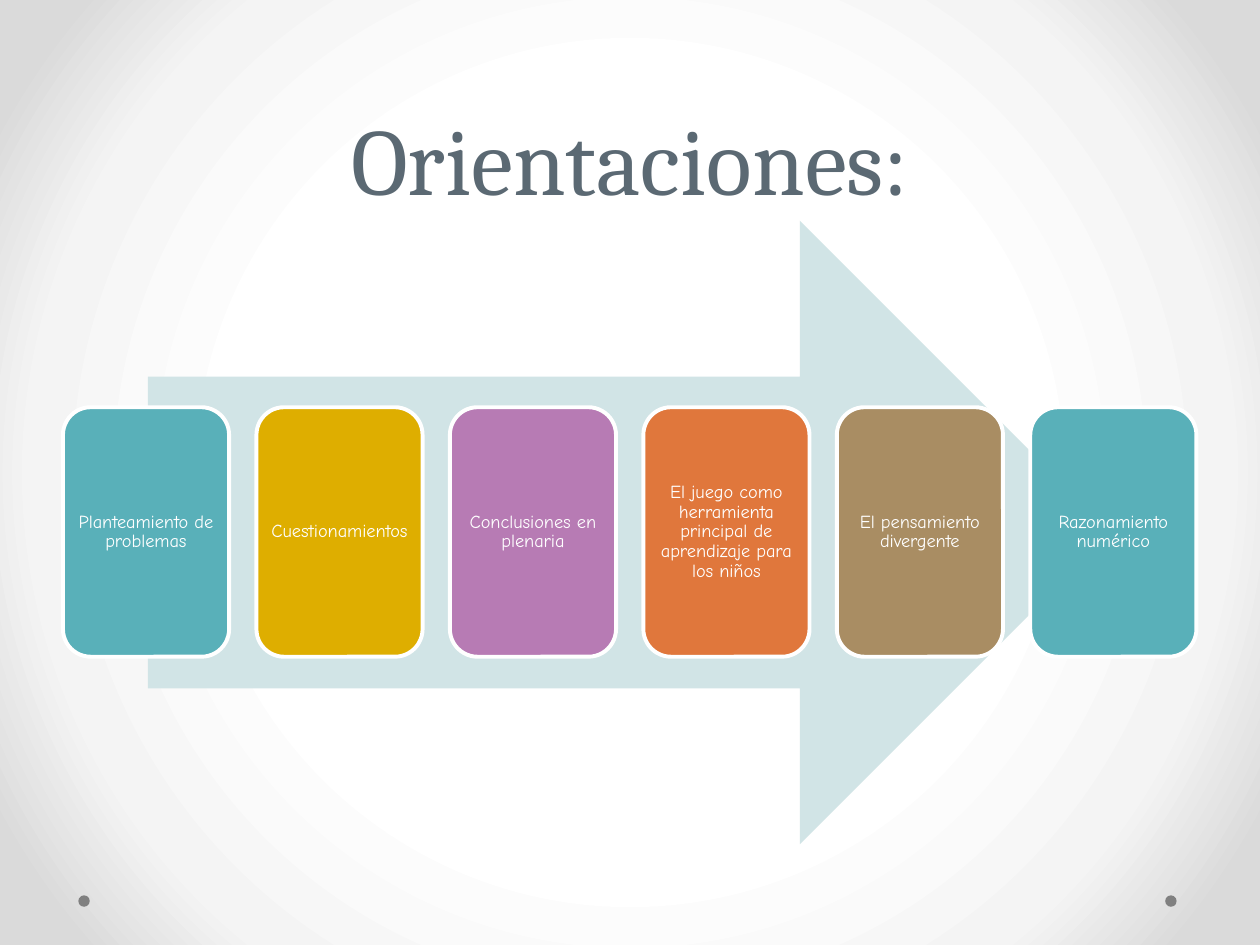
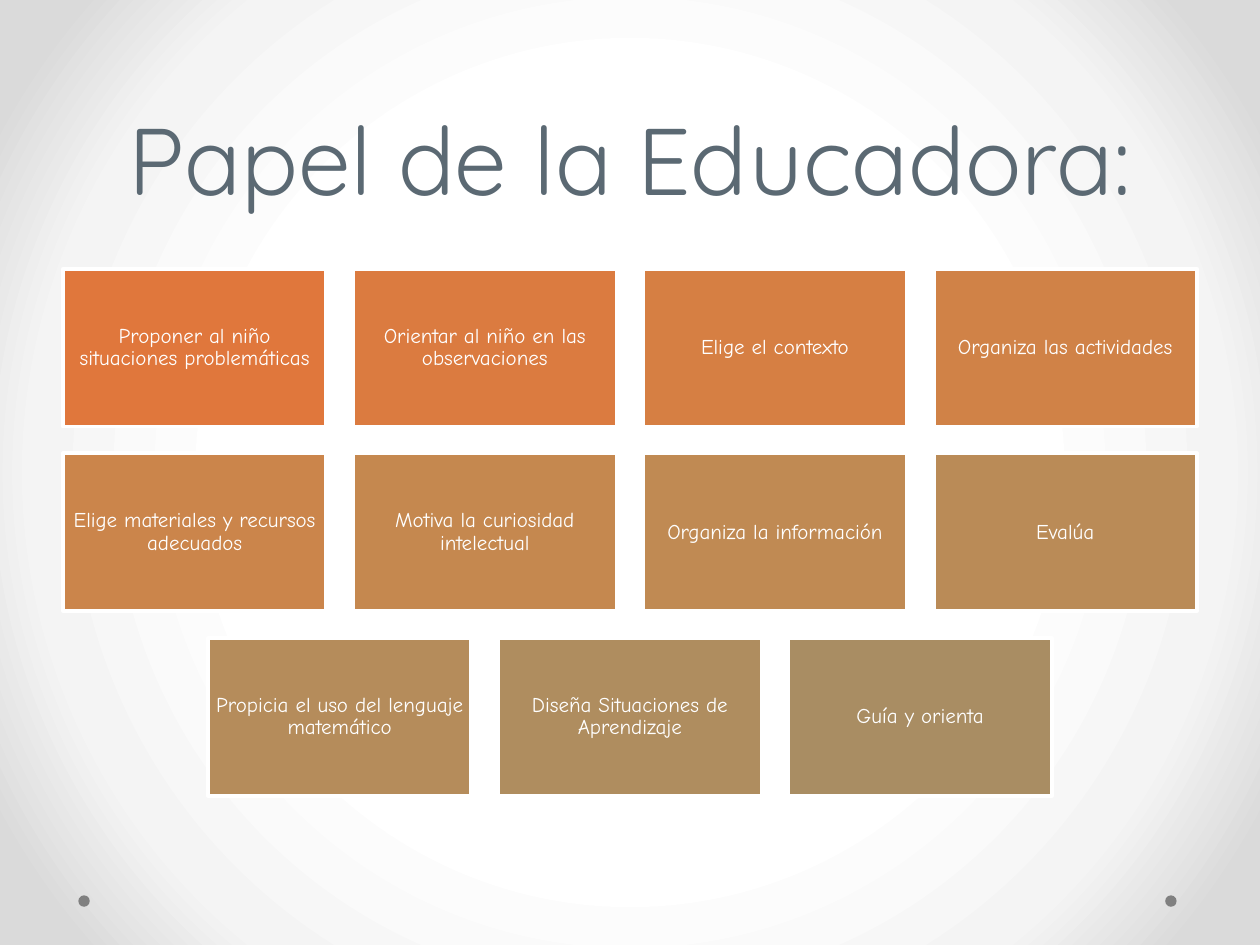
from lxml.etree import SubElement
from pptx import Presentation
from pptx.dml.color import RGBColor
from pptx.enum.shapes import MSO_SHAPE
from pptx.enum.text import MSO_ANCHOR, PP_ALIGN
from pptx.oxml.ns import qn
from pptx.util import Cm, Pt

WHITE = RGBColor(0xFF, 0xFF, 0xFF)
SLATE = RGBColor(0x5B, 0x69, 0x73)
GREY = RGBColor(0x80, 0x80, 0x80)
PALE_TEAL = RGBColor(0xD1, 0xE4, 0xE6)
TEAL = RGBColor(0x59, 0xB0, 0xB9)
GOLD = RGBColor(0xDE, 0xAE, 0x00)
PURPLE = RGBColor(0xB7, 0x7B, 0xB4)
ORANGE = RGBColor(0xE0, 0x77, 0x3C)
BROWN = RGBColor(0xA9, 0x8D, 0x63)
ORANGE_TO_BROWN = [ORANGE] + [RGBColor.from_string(shade) for shade in (
    "DB7B40", "D67F43", "D08247", "CB854B", "C5884F",
    "C08A53", "BA8B57", "B58C5B", "AF8D5F")] + [BROWN]
BACKGROUND_STOPS = [(50, "FFFFFF"), (76, "F4F4F4"), (92, "DADADA")]

SLIDE_WIDTH = 25.4
MARGIN = 1.27

prs = Presentation()
prs.slide_width, prs.slide_height = Cm(SLIDE_WIDTH), Cm(19.05)

# The master carries the radial background for both slides
prs.slide_master.background.fill.gradient()
gradient = prs.slide_master.element.find(".//" + qn("a:gradFill"))
for child in list(gradient):
    gradient.remove(child)
stops = SubElement(gradient, qn("a:gsLst"))
for percent, shade in BACKGROUND_STOPS:
    stop = SubElement(stops, qn("a:gs"), pos=str(percent * 1000))
    SubElement(stop, qn("a:srgbClr"), val=shade)
circle = SubElement(gradient, qn("a:path"), path="circle")
SubElement(circle, qn("a:fillToRect"), l="50000", t="50000", r="50000", b="50000")


def add_filled(slide, preset, left, top, width, height, color, outlined=False):
    """Add a flat shape, measured in cm, with an optional white outline."""
    shape = slide.shapes.add_shape(preset, Cm(left), Cm(top), Cm(width), Cm(height))
    shape.shadow.inherit = False
    shape.fill.solid()
    shape.fill.fore_color.rgb = color
    if outlined:
        shape.line.color.rgb = WHITE
        shape.line.width = Pt(2.25)
    else:
        shape.line.fill.background()
    return shape


def write_centred(shape, text, font_name, size, color, spacing, anchor):
    frame = shape.text_frame
    frame.word_wrap = True
    frame.vertical_anchor = anchor
    paragraph = frame.paragraphs[0]
    paragraph.alignment = PP_ALIGN.CENTER
    paragraph.line_spacing = spacing
    run = paragraph.add_run()
    run.text = text
    run.font.name = font_name
    run.font.size = Pt(size)
    run.font.color.rgb = color
    return frame


# Slide frame: footer dots and title
slides = []
for heading, heading_font in [("Orientaciones:", "Cambria"),
                              ("Papel de la Educadora:", "Quicksand")]:
    slide = prs.slides.add_slide(prs.slide_layouts[6])
    for dot_left in (23.49, 1.58):
        add_filled(slide, MSO_SHAPE.OVAL, dot_left, 18.05, 0.23, 0.23, GREY)
    title = slide.shapes.add_textbox(
        Cm(MARGIN), Cm(0), Cm(SLIDE_WIDTH - 2 * MARGIN), Cm(4.45))
    write_centred(title, heading, heading_font, 54, SLATE, Pt(58), MSO_ANCHOR.BOTTOM)
    slides.append(slide)
guidance_slide, teacher_slide = slides

# Cards as (slide, preset, left, top, width, height, colour, text, size)
cards = []

# Orientaciones: a row of steps over an arrow
add_filled(guidance_slide, MSO_SHAPE.RIGHT_ARROW, 2.98, 4.45, 19.43, 12.57, PALE_TEAL)
steps = [
    ("Planteamiento de problemas", TEAL),
    ("Cuestionamientos", GOLD),
    ("Conclusiones en plenaria", PURPLE),
    ("El juego como herramienta principal de aprendizaje para los niños", ORANGE),
    ("El pensamiento divergente", BROWN),
    ("Razonamiento numérico", TEAL),
]
for index, (step, color) in enumerate(steps):
    cards.append((guidance_slide, MSO_SHAPE.ROUNDED_RECTANGLE,
                  MARGIN + index * 3.9, 8.21, 3.35, 5.03, color, step, 10.5))

# Papel de la Educadora: rows of up to four roles, each row centred
roles = [
    "Proponer al niño situaciones problemáticas",
    "Orientar al niño en las observaciones",
    "Elige el contexto",
    "Organiza las actividades",
    "Elige materiales y recursos adecuados",
    "Motiva la curiosidad intelectual",
    "Organiza la información",
    "Evalúa",
    "Propicia el uso del lenguaje matemático",
    "Diseña Situaciones de Aprendizaje",
    "Guía y orienta",
]
COLUMNS = 4
ROLE_WIDTH, ROLE_HEIGHT, ROLE_GAP = 5.31, 3.18, 0.54
for index, (role, color) in enumerate(zip(roles, ORANGE_TO_BROWN)):
    row, column = divmod(index, COLUMNS)
    in_row = min(COLUMNS, len(roles) - row * COLUMNS)
    row_width = in_row * (ROLE_WIDTH + ROLE_GAP) - ROLE_GAP
    left = (SLIDE_WIDTH - row_width) / 2 + column * (ROLE_WIDTH + ROLE_GAP)
    top = 5.42 + row * (ROLE_HEIGHT + ROLE_GAP)
    cards.append((teacher_slide, MSO_SHAPE.RECTANGLE, left, top,
                  ROLE_WIDTH, ROLE_HEIGHT, color, role, 12))

for *placement, text, size in cards:
    card = add_filled(*placement, outlined=True)
    frame = write_centred(card, text, "Comic Neue", size, WHITE, 0.9, MSO_ANCHOR.MIDDLE)
    frame.margin_left = frame.margin_right = Cm(0.1)
    frame.margin_top = frame.margin_bottom = Cm(0.1)

prs.save("out.pptx")
